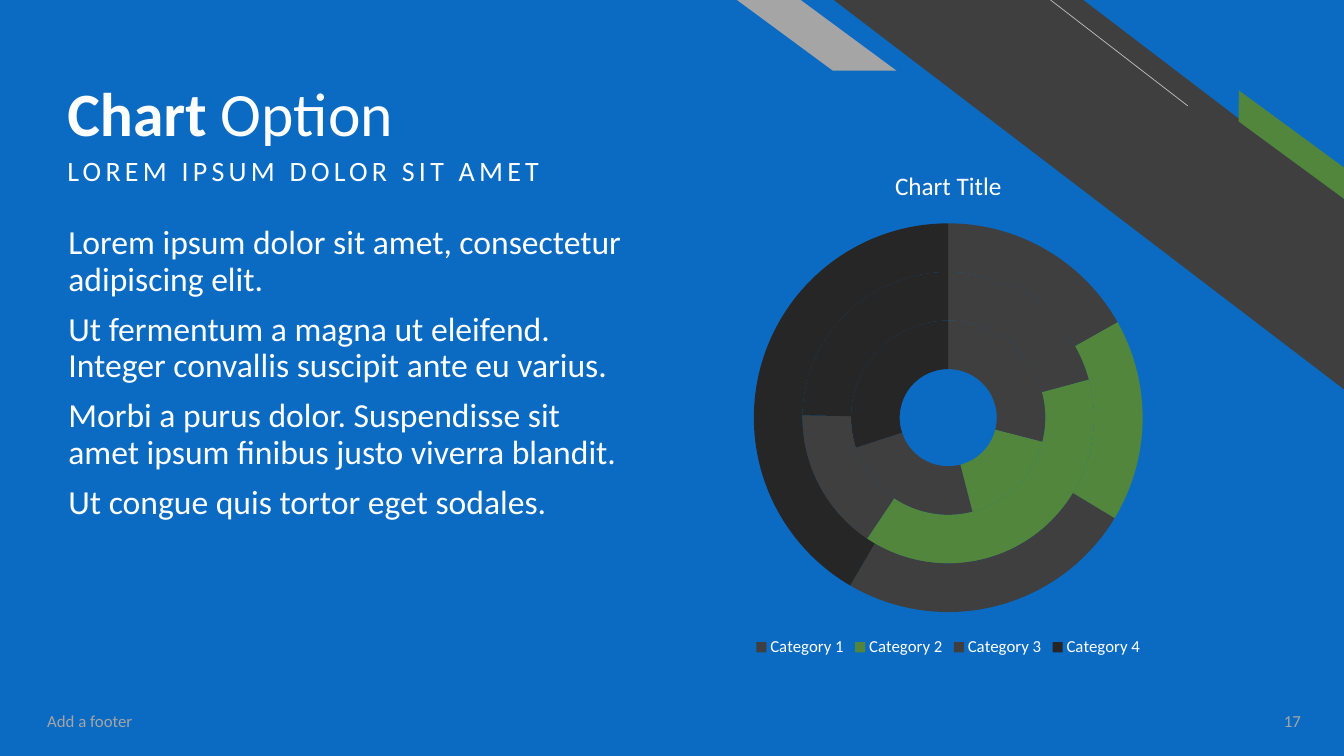
from dataclasses import dataclass

from lxml.etree import SubElement
from pptx import Presentation
from pptx.chart.data import CategoryChartData
from pptx.dml.color import RGBColor
from pptx.enum.chart import XL_CHART_TYPE as ChartType, XL_LEGEND_POSITION as LegendPosition
from pptx.enum.shapes import MSO_CONNECTOR as Connector, MSO_SHAPE as Shape
from pptx.enum.text import MSO_ANCHOR as Anchor, PP_ALIGN as Align
from pptx.oxml.ns import qn
from pptx.slide import Slide
from pptx.text.text import Font
from pptx.util import Inches, Pt

FONT = "Calibri"
BLUE, CHARCOAL, GREEN = "0B6BC3", "3E3F3E", "51863C"
BLACK, GRAY, PALE, WHITE = "252625", "A5A5A5", "BFBFBF", "FFFFFF"

Box = tuple[float, float, float, float]


@dataclass(frozen=True)
class Stripe:
    preset: Shape
    box: Box
    color: str
    slant: float
    rotation: float = 0


@dataclass(frozen=True)
class Run:
    text: str
    bold: bool = False


@dataclass(frozen=True)
class Copy:
    box: Box
    paragraphs: list[list[Run]]
    size: float
    color: str = WHITE
    anchor: Anchor = Anchor.TOP
    align: Align = Align.LEFT
    line_spacing: float = 0.9
    space_before: float = 0
    tracking: float = 0
    bottom_inset: float = 0.05


STRIPES = [
    Stripe(Shape.DIAGONAL_STRIPE, (8.27, 0, 5.07, 3.87), CHARCOAL, 0.512),
    Stripe(Shape.PARALLELOGRAM, (12.07, 1.31, 1.48, 0.25), GREEN, 0.72, 36.3),
    Stripe(Shape.PARALLELOGRAM, (7.31, 0, 1.58, 0.7), GRAY, 1.356),
]

BODY = [
    "Lorem ipsum dolor sit amet, consectetur adipiscing elit.",
    "Ut fermentum a magna ut eleifend. Integer convallis suscipit ante eu varius.",
    "Morbi a purus dolor. Suspendisse sit amet ipsum finibus justo viverra blandit.",
    "Ut congue quis tortor eget sodales.",
]

COPIES = [
    Copy((0.57, 0.23, 9.11, 1.26), [[Run("Chart ", True), Run("Option")]], 44,
         anchor=Anchor.BOTTOM, bottom_inset=0),
    Copy((0.57, 1.51, 8.06, 0.67), [[Run("LOREM IPSUM DOLOR SIT AMET")]], 20,
         space_before=10, tracking=3),
    Copy((0.58, 2.19, 5.71, 4.47), [[Run(text)] for text in BODY], 24, space_before=10),
    Copy((0.37, 6.95, 4.5, 0.4), [[Run("Add a footer")]], 12, GRAY, Anchor.MIDDLE,
         line_spacing=1),
    Copy((12.19, 6.95, 0.81, 0.4), [[Run("17")]], 12, GRAY, Anchor.MIDDLE, Align.RIGHT,
         line_spacing=1),
]

CATEGORY_COLORS = {
    "Category 1": CHARCOAL,
    "Category 2": GREEN,
    "Category 3": CHARCOAL,
    "Category 4": BLACK,
}
RINGS = {
    "Series 1": (29, 17, 24, 30),
    "Series 2": (21, 39, 16, 25),
    "Series 3": (17, 17, 25, 42),
}


def rgb(color: str) -> RGBColor:
    return RGBColor.from_string(color)


def inches(box: Box) -> list[Inches]:
    return [Inches(length) for length in box]


def style_font(font: Font, size: float, color: str, bold: bool = False) -> None:
    font.name = FONT
    font.size = Pt(size)
    font.bold = bold
    font.color.rgb = rgb(color)


def add_filled(slide: Slide, preset: Shape, box: Box, color: str):
    shape = slide.shapes.add_shape(preset, *inches(box))
    shape.shadow.inherit = False
    shape.fill.solid()
    shape.fill.fore_color.rgb = rgb(color)
    shape.line.fill.background()
    return shape


def add_stripe(slide: Slide, stripe: Stripe) -> None:
    """Draw a stripe mirrored left to right."""
    shape = add_filled(slide, stripe.preset, stripe.box, stripe.color)
    shape.adjustments[0] = stripe.slant
    shape.rotation = stripe.rotation
    shape.element.spPr.find(qn("a:xfrm")).set("flipH", "1")


def add_highlight(slide: Slide) -> None:
    """Draw the thin pale line along the dark stripe."""
    highlight = slide.shapes.add_connector(
        Connector.STRAIGHT, *inches((11.78, 1.05, 10.42, 0)))
    highlight.line.color.rgb = rgb(PALE)
    highlight.line.width = Pt(0.5)
    SubElement(highlight.element.spPr, qn("a:effectLst"))


def add_copy(slide: Slide, copy: Copy) -> None:
    frame = slide.shapes.add_textbox(*inches(copy.box)).text_frame
    frame.word_wrap = True
    frame.vertical_anchor = copy.anchor
    frame.margin_bottom = Inches(copy.bottom_inset)
    for index, runs in enumerate(copy.paragraphs):
        paragraph = frame.add_paragraph() if index else frame.paragraphs[0]
        paragraph.alignment = copy.align
        paragraph.line_spacing = copy.line_spacing
        paragraph.space_before = Pt(copy.space_before)
        for part in runs:
            run = paragraph.add_run()
            run.text = part.text
            style_font(run.font, copy.size, copy.color, part.bold)
            if copy.tracking:
                run.font._element.set("spc", str(round(copy.tracking * 100)))


def add_doughnut(slide: Slide) -> None:
    data = CategoryChartData()
    data.categories = list(CATEGORY_COLORS)
    for name, values in RINGS.items():
        data.add_series(name, values)
    chart = slide.shapes.add_chart(
        ChartType.DOUGHNUT, *inches((5.52, 1.47, 7.77, 5.09)), data).chart
    style_font(chart.font, 10, "3F3F3F")

    chart.has_title = True
    heading = chart.chart_title.text_frame.paragraphs[0].add_run()
    heading.text = "Chart Title"
    style_font(heading.font, 18, WHITE)
    chart.chart_title.include_in_layout = False

    chart.has_legend = True
    chart.legend.position = LegendPosition.BOTTOM
    chart.legend.include_in_layout = False
    style_font(chart.legend.font, 12, WHITE)

    for ring in chart.plots[0].series:
        for index, color in enumerate(CATEGORY_COLORS.values()):
            slice_format = ring.points[index].format
            slice_format.fill.solid()
            slice_format.fill.fore_color.rgb = rgb(color)
            slice_format.line.fill.background()


def main() -> None:
    deck = Presentation()
    deck.slide_width, deck.slide_height = Inches(13.33), Inches(7.5)
    slide = deck.slides.add_slide(deck.slide_layouts[6])
    add_filled(slide, Shape.RECTANGLE, (0, 0, 13.33, 7.5), BLUE)
    dark, *accents = STRIPES
    add_stripe(slide, dark)
    add_highlight(slide)
    for stripe in accents:
        add_stripe(slide, stripe)
    for copy in COPIES:
        add_copy(slide, copy)
    add_doughnut(slide)
    deck.save("out.pptx")


if __name__ == "__main__":
    main()
